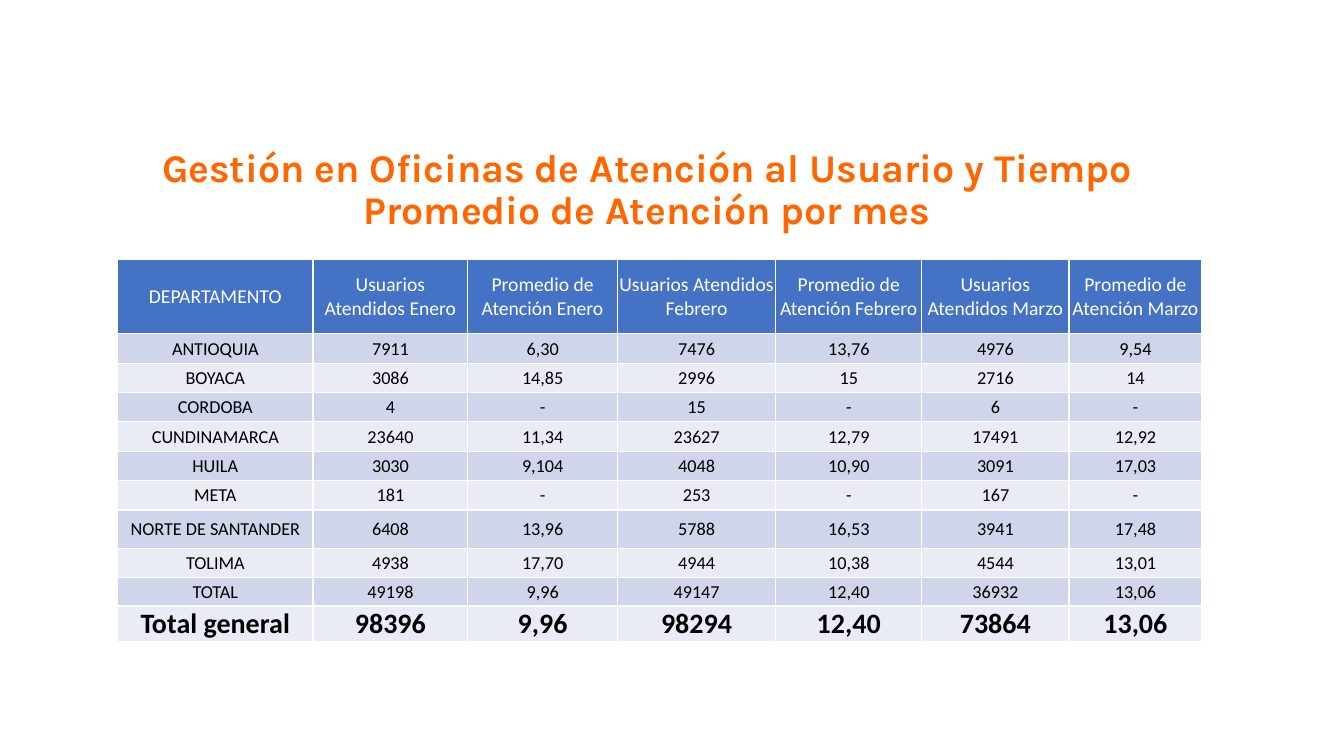
from pptx import Presentation
from pptx.dml.color import RGBColor
from pptx.enum.text import MSO_ANCHOR as Anchor, PP_ALIGN as Align
from pptx.util import Cm, Pt

HEADER = [
    "DEPARTAMENTO",
    "Usuarios Atendidos Enero", "Promedio de Atención Enero",
    "Usuarios Atendidos Febrero", "Promedio de Atención Febrero",
    "Usuarios Atendidos Marzo", "Promedio de Atención Marzo",
]
DEPARTMENTS = [
    ["ANTIOQUIA", "7911", "6,30", "7476", "13,76", "4976", "9,54"],
    ["BOYACA", "3086", "14,85", "2996", "15", "2716", "14"],
    ["CORDOBA", "4", "-", "15", "-", "6", "-"],
    ["CUNDINAMARCA", "23640", "11,34", "23627", "12,79", "17491", "12,92"],
    ["HUILA", "3030", "9,104", "4048", "10,90", "3091", "17,03"],
    ["META", "181", "-", "253", "-", "167", "-"],
    ["NORTE DE SANTANDER", "6408", "13,96", "5788", "16,53", "3941", "17,48"],
    ["TOLIMA", "4938", "17,70", "4944", "10,38", "4544", "13,01"],
    ["TOTAL", "49198", "9,96", "49147", "12,40", "36932", "13,06"],
]
GRAND_TOTAL = ["Total general", "98396", "9,96", "98294", "12,40", "73864", "13,06"]
COLUMN_WIDTHS = [4.93, 3.9, 3.77, 3.99, 3.68, 3.71, 3.35]
ROW_HEIGHTS = [1.88] + [0.74] * 6 + [0.97, 0.74, 0.71, 0.89]
BANDS = ["CFD5EA", "E9EBF5"]


def color(hex_code):
    return RGBColor.from_string(hex_code)


def style_paragraph(paragraph, font_name, size, hex_code, bold=False):
    paragraph.alignment = Align.CENTER
    font = paragraph.font
    font.name, font.size, font.bold = font_name, Pt(size), bold
    font.color.rgb = color(hex_code)


def add_title(slide, left, top, width, height):
    frame = slide.shapes.add_textbox(Cm(left), Cm(top), Cm(width), Cm(height)).text_frame
    frame.word_wrap = True
    frame.vertical_anchor = Anchor.BOTTOM
    heading = frame.paragraphs[0]
    heading.text = ("Gestión en Oficinas de Atención al Usuario y Tiempo "
                    "Promedio de Atención por mes")
    heading.line_spacing = 0.9
    style_paragraph(heading, "Karla", 28, "FF6600", bold=True)


def fill_row(row, values, fill, size, hex_code, bold=False):
    for cell, value in zip(row.cells, values):
        cell.fill.solid()
        cell.fill.fore_color.rgb = color(fill)
        cell.vertical_anchor = Anchor.MIDDLE
        cell.margin_left = cell.margin_right = cell.margin_top = Cm(0.02)
        cell.margin_bottom = 0
        cell.text = value
        style_paragraph(cell.text_frame.paragraphs[0], "Calibri", size, hex_code, bold)


def add_attention_table(slide, left, top):
    table = slide.shapes.add_table(
        len(ROW_HEIGHTS), len(COLUMN_WIDTHS), Cm(left), Cm(top),
        Cm(sum(COLUMN_WIDTHS)), Cm(sum(ROW_HEIGHTS))).table
    for column, width in zip(table.columns, COLUMN_WIDTHS):
        column.width = Cm(width)
    for row, height in zip(table.rows, ROW_HEIGHTS):
        row.height = Cm(height)

    header, *departments, grand_total = table.rows
    fill_row(header, HEADER, "4472C4", 14, "FFFFFF")
    for index, (row, values) in enumerate(zip(departments, DEPARTMENTS)):
        fill_row(row, values, BANDS[index % 2], 13, "000000")
    fill_row(grand_total, GRAND_TOTAL, BANDS[1], 20, "000000", bold=True)


def main():
    deck = Presentation()
    deck.slide_width, deck.slide_height = Cm(33.87), Cm(19.05)
    slide = deck.slides.add_slide(deck.slide_layouts[6])
    add_title(slide, 2.64, 3.4, 27.33, 2.6)
    add_attention_table(slide, 2.96, 6.53)
    deck.save("out.pptx")


if __name__ == "__main__":
    main()
